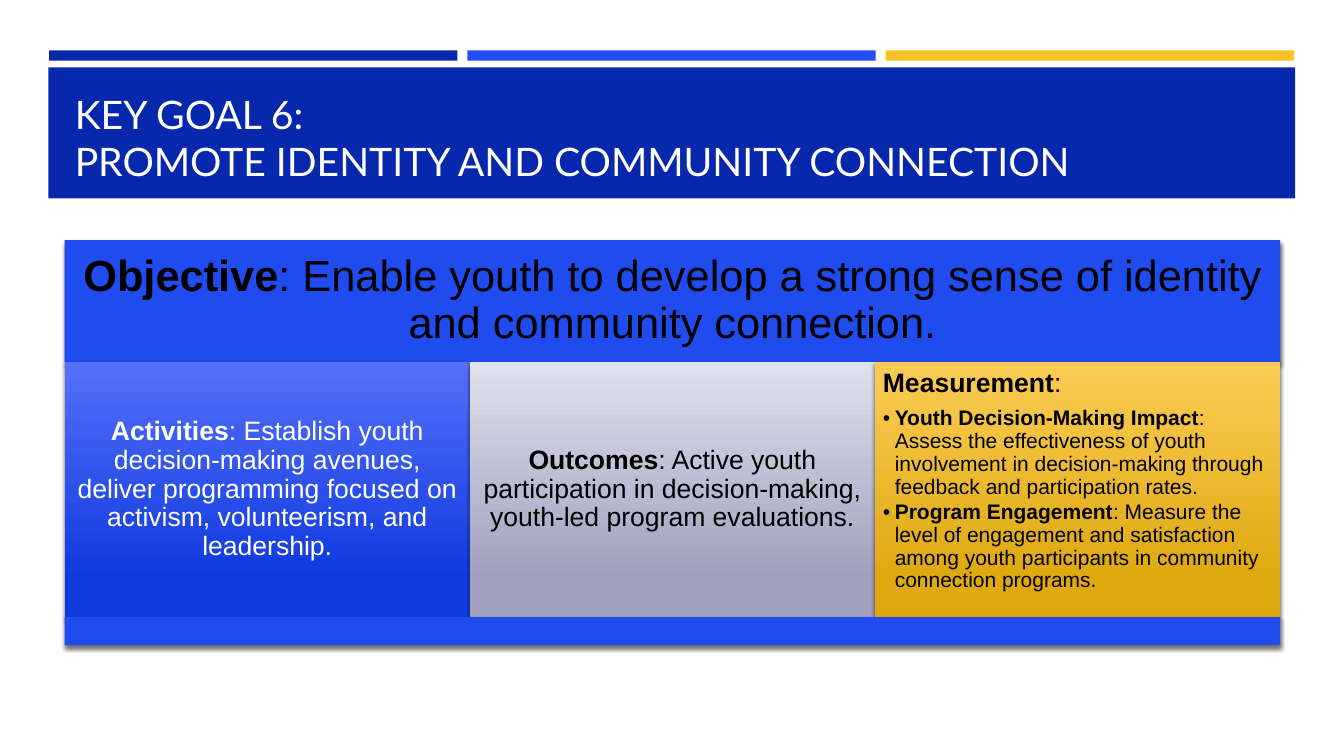
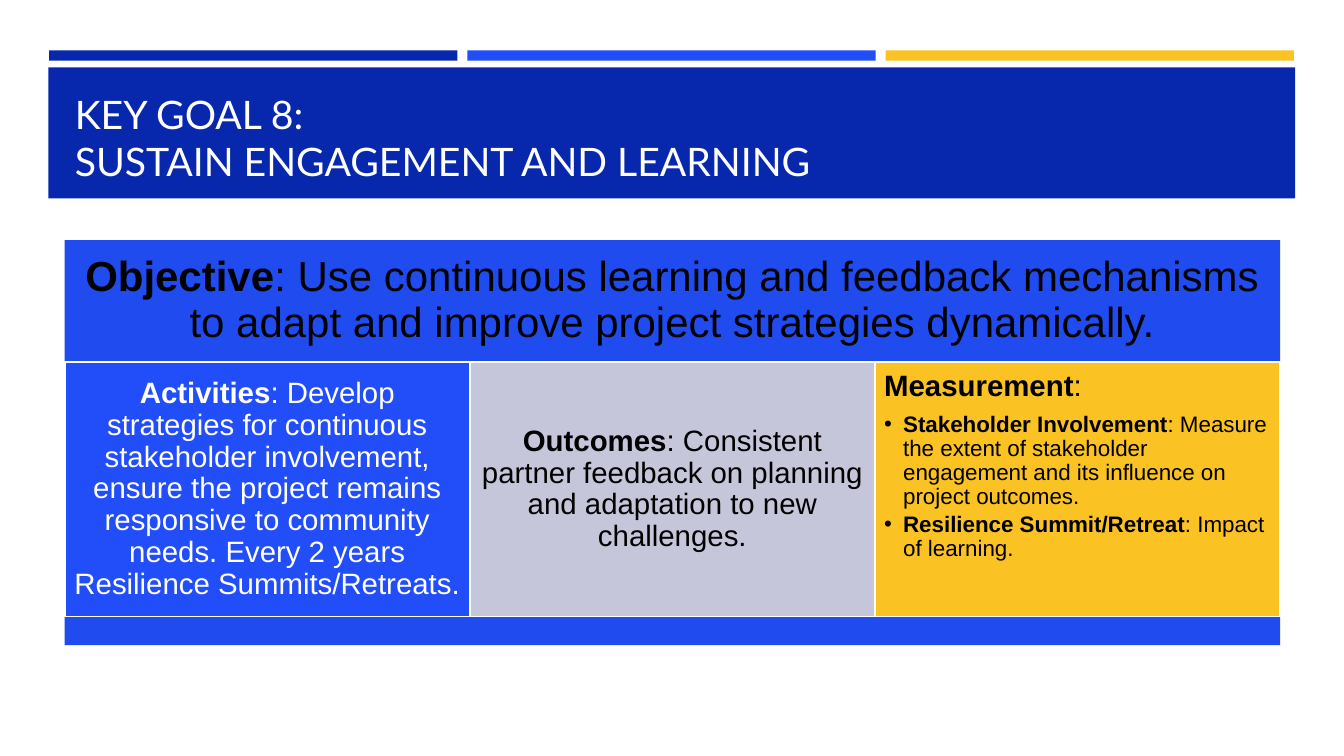
from dataclasses import dataclass

import pptx
import pptx.dml.color
import pptx.enum.shapes
import pptx.enum.text
import pptx.oxml
import pptx.oxml.ns
import pptx.util
from pptx.util import Cm, Pt

ALIGN = pptx.enum.text.PP_ALIGN
ANCHOR = pptx.enum.text.MSO_ANCHOR


@dataclass(frozen=True)
class Theme:
    navy: str = "0728AD"
    blue: str = "224EFA"
    objective_blue: str = "204BEF"
    lilac: str = "C6C6DB"
    gold: str = "FAC223"
    white: str = "FFFFFF"
    black: str = "000000"
    title_font: str = "Lato"
    body_font: str = "Arial"
    title_size: int = 28


THEME = Theme()


@dataclass(frozen=True)
class Finish:
    """How one slide's chart is finished: type sizes in points, lengths in cm."""
    objective_size: int
    panel_size: int
    bullet_size: int
    objective_inset: float
    panel_inset: float
    hang: float
    panel_fills: tuple
    outline: bool = False
    shadow: bool = False


RAISED = Finish(31, 19, 15, 0.33, 0.2, 0.3,
                (("5570FB", "103ADF"), ("E1E1EC", "A1A1BE"), ("FBCC55", "DFA910")),
                shadow=True)
FLAT = Finish(30, 21, 16, 0.3, 0.23, 0.48,
              (THEME.blue, THEME.lilac, THEME.gold), outline=True)

LEFT, WIDTH = 1.63, 30.63
PANEL_TOP, PANEL_WIDTH, PANEL_HEIGHT = 9.12, WIDTH / 3, 6.43


def rgb(code):
    return pptx.dml.color.RGBColor.from_string(code)


def drawing_xml(markup):
    namespace = pptx.oxml.ns.nsdecls("a")
    return pptx.oxml.parse_xml(markup.replace(" ", f" {namespace} ", 1))


class GoalDeck:
    def __init__(self, theme):
        self.theme = theme
        self.deck = pptx.Presentation()
        self.deck.slide_width, self.deck.slide_height = Cm(33.87), Cm(19.05)
        self.slide = self.finish = None

    def start(self, heading, finish):
        self.finish = finish
        self.slide = self.deck.slides.add_slide(self.deck.slide_layouts[1])
        self.box(1.22, 1.7, 31.42, 3.3, self.theme.navy)
        for column, color in enumerate((self.theme.navy, self.theme.blue, self.theme.gold)):
            self.box(1.24 + column * 10.54, 1.27, 10.29, 0.26, color)
        self.title(heading)

    def bring_forward(self, shape):
        self.slide.shapes._spTree.append(shape._element)

    def place(self, shape, left, top, width, height):
        shape.left, shape.top = Cm(left), Cm(top)
        shape.width, shape.height = Cm(width), Cm(height)

    def box(self, left, top, width, height, fill):
        shape = self.slide.shapes.add_shape(
            pptx.enum.shapes.MSO_SHAPE.RECTANGLE, Cm(left), Cm(top), Cm(width), Cm(height))
        self.paint(shape, fill)
        shape.shadow.inherit = False
        return shape

    def paint(self, shape, fill, outlined=False):
        """Fill with one colour, or fade downwards from the first of two colours."""
        if isinstance(fill, str):
            shape.fill.solid()
            shape.fill.fore_color.rgb = rgb(fill)
        else:
            shape.fill.gradient()
            shape.fill.gradient_angle = 270
            for stop, color, position in zip(shape.fill.gradient_stops, fill, (0, 0.84)):
                stop.color.rgb = rgb(color)
                stop.position = position
        if outlined:
            shape.line.color.rgb = rgb(self.theme.white)
            shape.line.width = Pt(1.75)
        else:
            shape.line.fill.background()

    def raise_up(self, shape):
        """Cast the soft shadow where the slide's finish has one."""
        shape.shadow.inherit = False
        if self.finish.shadow:
            effects = shape._element.spPr.find(pptx.oxml.ns.qn("a:effectLst"))
            effects.append(drawing_xml(
                f'<a:outerShdw blurRad="{Pt(3)}" dist="{Pt(2)}" dir="5400000" rotWithShape="0">'
                f'<a:srgbClr val="{self.theme.black}"><a:alpha val="55000"/></a:srgbClr>'
                '</a:outerShdw>'))

    def title(self, heading):
        title = self.slide.shapes.title
        self.place(title, LEFT, 1.96, WIDTH, 2.82)
        self.bring_forward(title)
        frame = title.text_frame
        frame.text = heading
        frame.auto_size = pptx.enum.text.MSO_AUTO_SIZE.NONE
        frame.vertical_anchor = ANCHOR.BOTTOM
        frame.paragraphs[0].alignment = ALIGN.LEFT
        for run in frame.paragraphs[0].runs:
            self.style(run, self.theme.title_size, self.theme.white, self.theme.title_font)

    def style(self, run, size, color, font, bold=False):
        run.font.size, run.font.name, run.font.bold = Pt(size), font, bold
        run.font.color.rgb = rgb(color)

    def frame(self, shape, inset, anchor):
        frame = shape.text_frame
        frame.word_wrap = True
        frame.auto_size = pptx.enum.text.MSO_AUTO_SIZE.NONE
        frame.vertical_anchor = anchor
        frame.margin_left = frame.margin_right = Cm(inset)
        frame.margin_top = frame.margin_bottom = Cm(inset)
        return frame

    def statement(self, paragraph, label, detail, size, color, align, after=0.35):
        """Write a bold label followed by its plain detail."""
        paragraph.text = label
        paragraph.add_run().text = ":" + detail
        for run, bold in zip(paragraph.runs, (True, False)):
            self.style(run, size, color, self.theme.body_font, bold)
        paragraph.alignment = align
        paragraph.line_spacing = 0.9
        paragraph.space_before = Pt(0)
        paragraph.space_after = Pt(round(size * after, 1))

    def bullet(self, paragraph, hang):
        """Set the hanging indent, with a bullet if there is one."""
        properties = paragraph._p.get_or_add_pPr()
        properties.set("marL", str(Cm(hang)))
        properties.set("indent", str(-Cm(hang)))
        if hang:
            properties.append(drawing_xml(f'<a:buFont typeface="{self.theme.body_font}"/>'))
            properties.append(drawing_xml('<a:buChar char="•"/>'))
        else:
            properties.append(drawing_xml('<a:buNone />'))

    def objective(self, detail):
        banner = self.box(LEFT, 6.05, WIDTH, 3.07, self.theme.objective_blue)
        self.raise_up(banner)
        frame = self.frame(banner, self.finish.objective_inset, ANCHOR.MIDDLE)
        self.statement(frame.paragraphs[0], "Objective", detail,
                       self.finish.objective_size, self.theme.black, ALIGN.CENTER)

    def panel(self, shape, column):
        self.place(shape, LEFT + column * PANEL_WIDTH, PANEL_TOP, PANEL_WIDTH, PANEL_HEIGHT)
        self.paint(shape, self.finish.panel_fills[column], self.finish.outline)
        self.raise_up(shape)

    def summary(self, column, label, detail, color):
        summary = self.box(LEFT, PANEL_TOP, PANEL_WIDTH, PANEL_HEIGHT, self.theme.white)
        self.panel(summary, column)
        frame = self.frame(summary, self.finish.panel_inset, ANCHOR.MIDDLE)
        self.statement(frame.paragraphs[0], label, detail,
                       self.finish.panel_size, color, ALIGN.CENTER)

    def measurement(self, measures):
        measurement = self.slide.placeholders[1]
        self.bring_forward(measurement)
        self.panel(measurement, 2)
        frame = self.frame(measurement, self.finish.panel_inset, ANCHOR.TOP)
        lead = frame.paragraphs[0]
        self.statement(lead, "Measurement", "", self.finish.panel_size,
                       self.theme.black, ALIGN.LEFT)
        self.bullet(lead, 0)
        for label, detail in measures:
            measure = frame.add_paragraph()
            measure.level = 1
            self.statement(measure, label, detail, self.finish.bullet_size,
                           self.theme.black, ALIGN.LEFT, after=0.15)
            self.bullet(measure, self.finish.hang)

    def goal(self, heading, finish, objective, activities, outcomes, measures):
        self.start(heading, finish)
        self.objective(objective)
        self.summary(0, "Activities", activities, self.theme.white)
        self.summary(1, "Outcomes", outcomes, self.theme.black)
        self.measurement(measures)
        base = self.box(LEFT, PANEL_TOP + PANEL_HEIGHT, WIDTH, 0.71, self.theme.objective_blue)
        self.raise_up(base)


def main():
    goals = GoalDeck(THEME)
    goals.goal(
        "KEY GOAL 6:\vPROMOTE IDENTITY AND COMMUNITY CONNECTION", RAISED,
        " Enable youth to develop a strong sense of identity and community connection.",
        " Establish youth decision-making avenues, deliver programming focused on activism, "
        "volunteerism, and leadership.",
        " Active youth participation in decision-making, youth-led program evaluations.",
        [("Youth Decision-Making Impact",
          " Assess the effectiveness of youth involvement in decision-making through "
          "feedback and participation rates."),
         ("Program Engagement",
          " Measure the level of engagement and satisfaction among youth participants in "
          "community connection programs.")])
    goals.goal(
        "KEY GOAL 8:\vSUSTAIN ENGAGEMENT AND LEARNING", FLAT,
        " Use continuous learning and feedback mechanisms to adapt and improve project "
        "strategies dynamically.",
        " Develop strategies for continuous stakeholder involvement, ensure the project "
        "remains responsive to community needs. Every 2 years Resilience Summits/Retreats.",
        " Consistent partner feedback on planning and adaptation to new challenges.",
        [("Stakeholder Involvement",
          " Measure the extent of stakeholder engagement and its influence on project "
          "outcomes."),
         ("Resilience Summit/Retreat", " Impact of learning.")])
    goals.deck.save("out.pptx")


if __name__ == "__main__":
    main()
